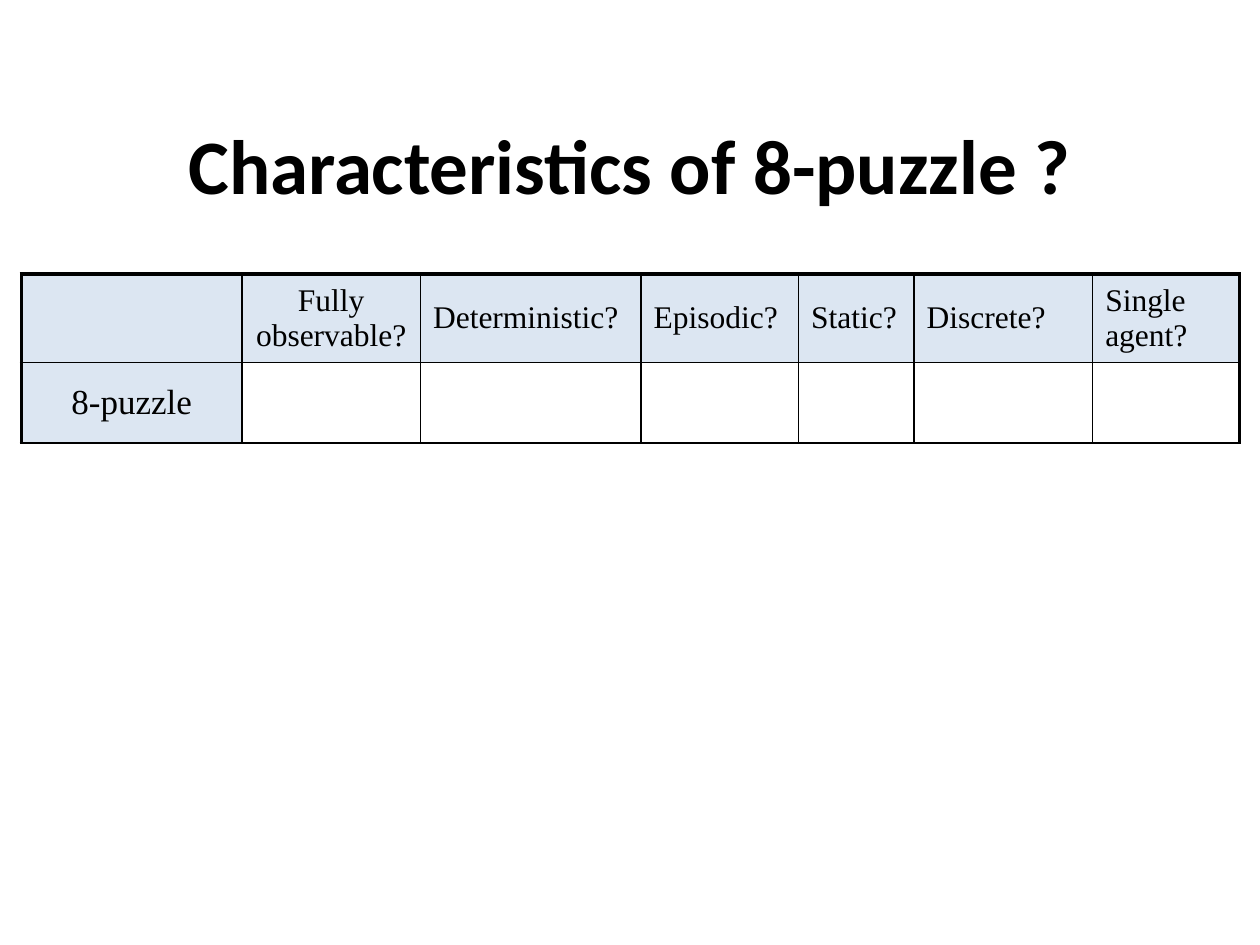
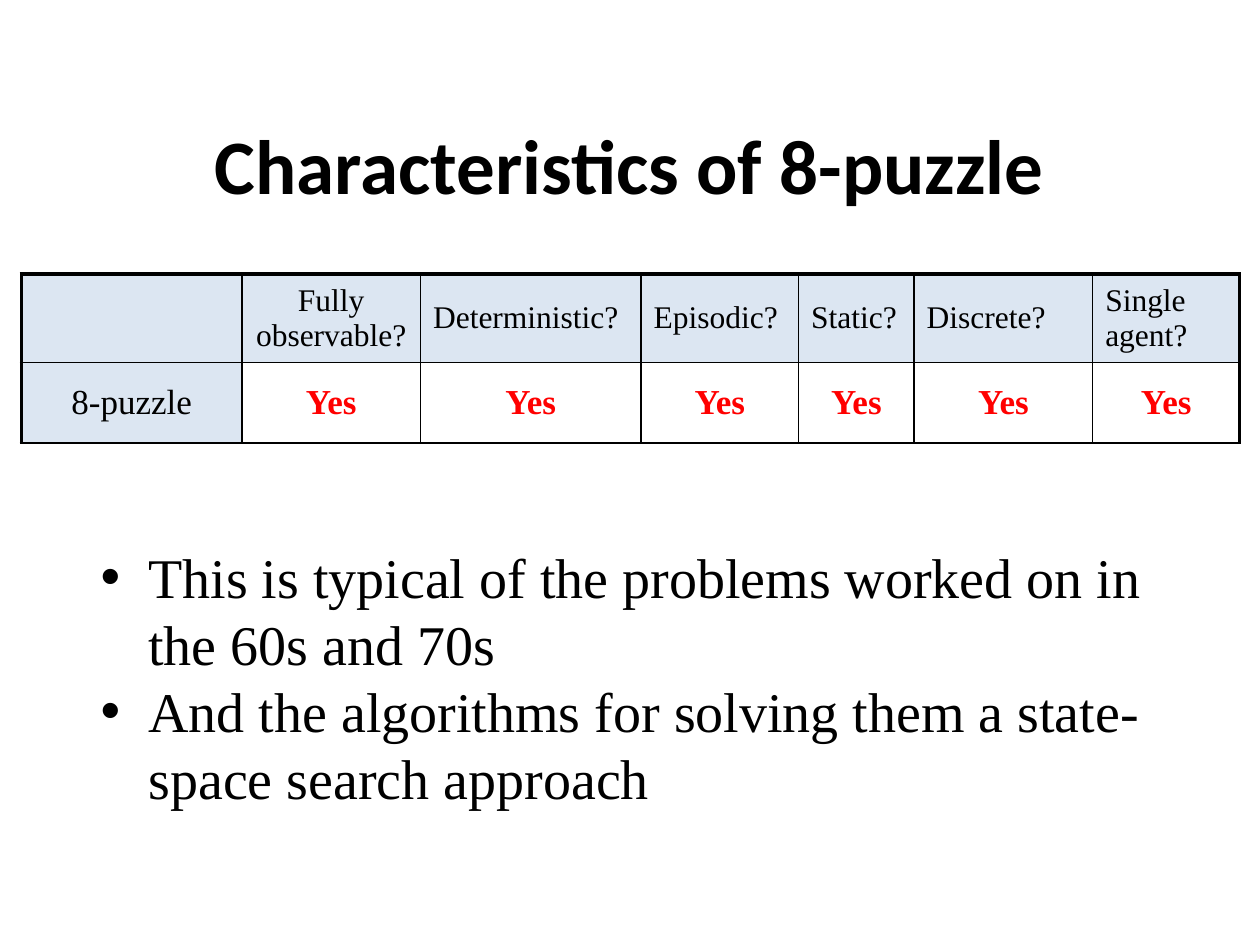
from lxml import etree
from pptx import Presentation
from pptx.dml.color import RGBColor
from pptx.enum.text import MSO_ANCHOR, PP_ALIGN
from pptx.oxml.ns import qn
from pptx.util import Inches, Pt

CENTER, LEFT = PP_ALIGN.CENTER, PP_ALIGN.LEFT
MIDDLE, TOP = MSO_ANCHOR.MIDDLE, MSO_ANCHOR.TOP
TITLE_ONLY = 5

BLACK, RED, PALE_BLUE = "000000", "FF0000", "DCE6F2"
HEAD_FONT, BODY_FONT = "Calibri", "Times New Roman"
THIN, THICK = 1, 2.25

WIDTH, HEIGHT = Inches(10), Inches(7.5)
TITLE_BOX = (0.075, 0.09, 0.85, 0.167)
TABLE_BOX = (0.017, 0.29, 0.967, 0.179)
BULLETS_BOX = (0.07, 0.567, 0.893, 0.372)
COLUMN_UNITS = [21, 17, 21, 15, 11, 17, 14]
ROW_UNITS = [35, 32]

QUESTIONS = ["Fully\vobservable?", "Deterministic?", "Episodic?", "Static?",
             "Discrete?", "Single agent?"]
BULLETS = ["This is typical of the problems worked on in the 60s and 70s",
           "And the algorithms for solving them a state-space search approach"]


def color(value):
    return RGBColor.from_string(value)


def place(box):
    left, top, width, height = box
    return (round(left * WIDTH), round(top * HEIGHT),
            round(width * WIDTH), round(height * HEIGHT))


def format_text(p, size, font=BODY_FONT, fill=BLACK, bold=False, align=LEFT):
    p.alignment = align
    for f in [p.font] + [r.font for r in p.runs]:
        f.size, f.name, f.bold = Pt(size), font, bold
        f.color.rgb = color(fill)


def add_title(s, text, box):
    sp = s.shapes.title
    sp.left, sp.top, sp.width, sp.height = place(box)
    tf = sp.text_frame
    tf.text = text
    tf.vertical_anchor = MIDDLE
    format_text(tf.paragraphs[0], 44, HEAD_FONT, bold=True, align=CENTER)


def set_borders(cell, weights):
    tc_pr = cell._tc.get_or_add_tcPr()
    for side, weight in weights.items():
        ln = etree.SubElement(tc_pr, qn(f"a:ln{side}"), w=str(Pt(weight)))
        fill = etree.SubElement(ln, qn("a:solidFill"))
        etree.SubElement(fill, qn("a:srgbClr"), val=BLACK)


def fill_cell(cell, text, row, col):
    is_label = row == 0 or col == 0
    last = len(COLUMN_UNITS) - 1
    set_borders(cell, {"L": THICK if col == 0 else THIN,
                       "R": THICK if col == last else THIN,
                       "T": THICK if row == 0 else THIN,
                       "B": THIN})
    if is_label:
        cell.fill.solid()
        cell.fill.fore_color.rgb = color(PALE_BLUE)
    else:
        cell.fill.background()
    cell.text_frame.text = text
    cell.vertical_anchor = MIDDLE
    format_text(cell.text_frame.paragraphs[0], 18 if row == 0 else 20,
                fill=BLACK if is_label else RED, bold=not is_label,
                align=LEFT if row == 0 and col > 1 else CENTER)


def add_characteristics(s, answer, box):
    left, top, width, height = place(box)
    rows = [[""] + QUESTIONS, ["8-puzzle"] + [answer] * len(QUESTIONS)]
    table = s.shapes.add_table(len(rows), len(COLUMN_UNITS),
                               left, top, width, height).table
    table.first_row = table.horz_banding = False
    for column, units in zip(table.columns, COLUMN_UNITS):
        column.width = round(width * units / sum(COLUMN_UNITS))
    for row, units in zip(table.rows, ROW_UNITS):
        row.height = round(height * units / sum(ROW_UNITS))
    for i, texts in enumerate(rows):
        for j, text in enumerate(texts):
            fill_cell(table.cell(i, j), text, i, j)


def add_bullets(s, items, box):
    tf = s.shapes.add_textbox(*place(box)).text_frame
    tf.word_wrap = True
    tf.vertical_anchor = TOP
    tf.text = "\n".join(items)
    for p in tf.paragraphs:
        format_text(p, 32)
        p_pr = p._p.get_or_add_pPr()
        p_pr.set("marL", str(Inches(0.38)))
        p_pr.set("indent", str(-Inches(0.38)))
        bullet_font = etree.Element(qn("a:buFont"), typeface="Arial")
        bullet = etree.Element(qn("a:buChar"), char="•")
        p_pr.insert(0, bullet_font)
        p_pr.insert(1, bullet)


def add_puzzle_slide(prs, title, answer="", bullets=()):
    s = prs.slides.add_slide(prs.slide_layouts[TITLE_ONLY])
    add_title(s, title, TITLE_BOX)
    add_characteristics(s, answer, TABLE_BOX)
    if bullets:
        add_bullets(s, bullets, BULLETS_BOX)


def main():
    prs = Presentation()
    prs.slide_width, prs.slide_height = WIDTH, HEIGHT
    add_puzzle_slide(prs, "Characteristics of 8-puzzle ?")
    add_puzzle_slide(prs, "Characteristics of 8-puzzle", "Yes", BULLETS)
    prs.save("out.pptx")


if __name__ == "__main__":
    main()
